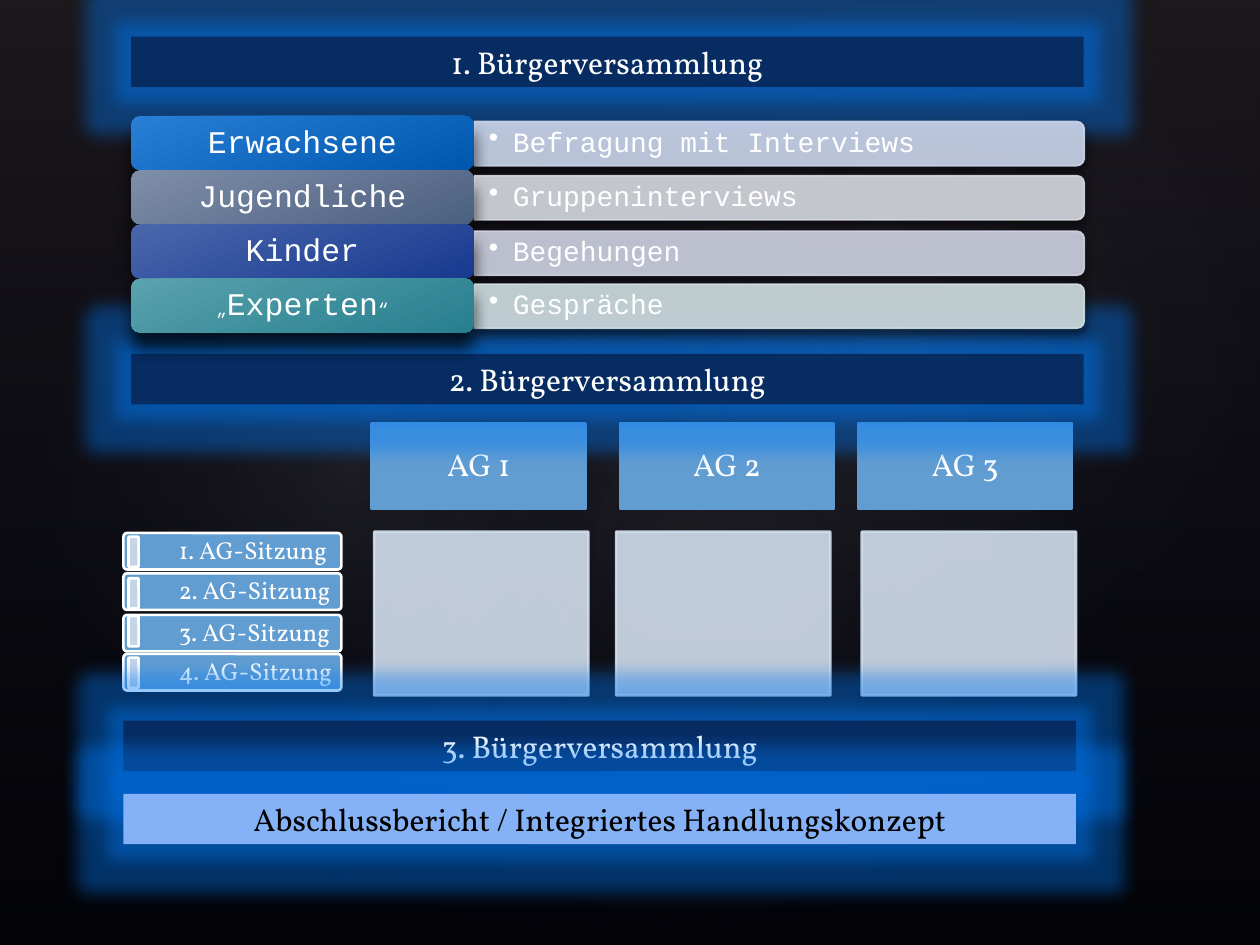
import pptx
import pptx.util
import pptx.dml.color
import pptx.enum.shapes
import pptx.enum.text
import pptx.oxml
import pptx.oxml.ns
from lxml import etree

Inches = pptx.util.Inches
Pt = pptx.util.Pt
qn = pptx.oxml.ns.qn
SHAPE = pptx.enum.shapes.MSO_SHAPE
ALIGN = pptx.enum.text.PP_ALIGN
NAMESPACE = pptx.oxml.ns.nsdecls("a")

COLORS = {
    "black": "000000", "white": "FFFFFF", "navy": "072C62", "sky": "629DD1",
    "pale": "C5D5E9", "panel": "D3DFEE", "report": "85B2F6", "glow": "0078F5",
    "haze": "504652", "night": "242852", "spot": "C4BCC6",
}
GROUPS = [
    ([("Erwachsene", 18)], "Befragung mit Interviews", "297FD5", "0057AE", "CDD8EF", 0.96, 0.14),
    ([("Jugendliche", 18)], "Gruppeninterviews", "7F8FA9", "4B5F7F", "D8DBE2", 1.39, 0.14),
    ([("Kinder", 18)], "Begehungen", "4A66AC", "183A90", "D0D3E3", 1.83, 0.14),
    ([("„", 10), ("Experten", 18), ("“", 10)], "Gespräche", "5AA2AE", "277F8E", "D2E0E3", 2.25, 0.08),
]


def color(value):
    return pptx.dml.color.RGBColor.from_string(value)


def add_block(page, kind, left, top, width, height, fill, line=None, weight=1.5,
              alpha=None, corner=None, rotation=0):
    shape = page.shapes.add_shape(kind, Inches(left), Inches(top), Inches(width), Inches(height))
    shape.shadow.inherit = False
    shape.rotation = rotation
    shape.fill.solid()
    shape.fill.fore_color.rgb = color(fill)
    if line:
        shape.line.color.rgb = color(line)
        shape.line.width = Pt(weight)
    else:
        shape.line.fill.background()
    if corner is not None:
        shape.adjustments[0] = corner
    if alpha:
        for tone in shape._element.spPr.iter(qn("a:srgbClr")):
            etree.SubElement(tone, qn("a:alpha"), val=str(alpha * 1000))
    return shape


def set_gradient(shape, stops, angle=None):
    marks = "".join(
        f'<a:gs pos="{position * 1000}"><a:srgbClr val="{tone}">'
        f'<a:alpha val="{alpha * 1000}"/></a:srgbClr></a:gs>'
        for position, tone, alpha in stops)
    if angle is None:
        course = '<a:path path="circle"><a:fillToRect l="50000" t="50000" r="50000" b="50000"/></a:path>'
    else:
        course = f'<a:lin ang="{angle * 60000}" scaled="0"/>'
    gradient = pptx.oxml.parse_xml(
        f'<a:gradFill {NAMESPACE} rotWithShape="1"><a:gsLst>{marks}</a:gsLst>{course}</a:gradFill>')
    properties = shape._element.spPr
    properties.replace(properties.find(qn("a:solidFill")), gradient)


def add_effect(shape, tag, tone, alpha, **attributes):
    effects = shape._element.spPr.find(qn("a:effectLst"))
    effect = etree.SubElement(effects, qn(tag), attributes)
    etree.SubElement(etree.SubElement(effect, qn("a:srgbClr"), val=tone),
                     qn("a:alpha"), val=str(alpha * 1000))


def add_shadow(shape, alpha, blur, distance):
    add_effect(shape, "a:outerShdw", COLORS["black"], alpha, blurRad=str(Pt(blur)),
               dist=str(Pt(distance)), dir="5400000", algn="ctr", rotWithShape="0")


def write_text(box, pieces, font="Vollkorn", tone="white", align=ALIGN.CENTER,
               insets=(0.1, 0.05), spacing=None, bullet=False):
    frame = box.text_frame
    frame.word_wrap = True
    frame.vertical_anchor = pptx.enum.text.MSO_ANCHOR.MIDDLE
    frame.margin_left = frame.margin_right = Inches(insets[0])
    frame.margin_top = frame.margin_bottom = Inches(insets[1])
    para = frame.paragraphs[0]
    para.alignment = align
    if spacing:
        para.line_spacing = spacing
    if bullet:
        para.level = 1
        properties = para._p.get_or_add_pPr()
        properties.set("marL", str(Inches(0.19)))
        properties.set("indent", str(-Inches(0.19)))
        etree.SubElement(properties, qn("a:buChar"), char="•")
    for text, size in pieces:
        span = para.add_run()
        span.text = text
        span.font.name = font
        span.font.size = Pt(size)
        span.font.color.rgb = color(COLORS[tone])


def add_label(page, left, top, width, height, pieces, **style):
    box = page.shapes.add_textbox(Inches(left), Inches(top), Inches(width), Inches(height))
    write_text(box, pieces, spacing=0.9, **style)


def add_backdrop(page):
    page.background.fill.solid()
    page.background.fill.fore_color.rgb = color(COLORS["black"])
    veil = add_block(page, SHAPE.RECTANGLE, 0, 0, 10, 7.5, COLORS["night"])
    set_gradient(veil, [(0, COLORS["haze"], 36), (100, COLORS["night"], 10)], 90)
    for left, top, width, height, rotation, alpha in [
            (1.5, 1.14, 7.92, 6.24, 328.7, 7),
            (-0.3, 1.28, 6.06, 4.9, 294.3, 8),
            (3.58, 0.13, 7.09, 5.2, 328.7, 8)]:
        spot = add_block(page, SHAPE.OVAL, left, top, width, height, COLORS["spot"], rotation=rotation)
        set_gradient(spot, [(0, COLORS["spot"], alpha), (58, COLORS["night"], 0)])


def add_session(page, number, top, tab_top):
    frame = dict(line=COLORS["white"], corner=0.1)
    add_block(page, SHAPE.ROUNDED_RECTANGLE, 0.98, top, 1.73, 0.29, COLORS["sky"], **frame)
    add_label(page, 1.36, top, 1.36, 0.29, [(f"{number}. AG-Sitzung", 14)],
              align=ALIGN.LEFT, insets=(0.06, 0.06))
    add_block(page, SHAPE.ROUNDED_RECTANGLE, 1.02, tab_top, 0.08, 0.24, COLORS["pale"], **frame)


def add_team(page, number, left, panel_left):
    tile = add_block(page, SHAPE.RECTANGLE, left, 3.36, 1.7, 0.68, COLORS["sky"], COLORS["sky"])
    write_text(tile, [(f"AG {number}", 18)], insets=(0.14, 0.08), spacing=0.9)
    add_block(page, SHAPE.RECTANGLE, panel_left, 4.22, 1.7, 1.3,
              COLORS["panel"], COLORS["panel"], alpha=90)


def add_bar(page, left, top, text, fill="navy", tone="white"):
    bar = add_block(page, SHAPE.RECTANGLE, left, top, 7.56, 0.4, COLORS[fill])
    add_effect(bar, "a:glow", COLORS["glow"], 40, rad=str(Inches(0.25)))
    write_text(bar, [(text, 18)], tone=tone)


def add_group(page, top, pieces, method, start, end, pale, strip_top, inset):
    strip = add_block(page, SHAPE.ROUND_2_SAME_RECTANGLE, 6.01, strip_top - 2.24, 0.35, 4.84,
                      pale, pale, 1, alpha=90, rotation=90)
    add_shadow(strip, 60, 6, 3)
    add_label(page, 3.76, strip_top + 0.02, 4.82, 0.31, [(method, 16)], font="Courier New",
              align=ALIGN.LEFT, insets=(0.12, 0.12), bullet=True)
    plate = add_block(page, SHAPE.ROUNDED_RECTANGLE, 1.04, top, 2.72, 0.43, start)
    set_gradient(plate, [(0, start, 100), (100, end, 100)], 69)
    add_shadow(plate, 70, 9, 9)
    add_label(page, 1.06, top + 0.02, 2.68, 0.39, pieces, font="Courier New", insets=(inset, inset))


def main():
    deck = pptx.Presentation()
    deck.slide_width, deck.slide_height = Inches(10), Inches(7.5)
    page = deck.slides.add_slide(deck.slide_layouts[6])
    add_backdrop(page)
    for number, tops in enumerate([(4.23, 4.26), (4.55, 4.59), (4.88, 4.89), (5.19, 5.22)], 1):
        add_session(page, number, *tops)
    for number, lefts in enumerate([(2.95, 2.97), (4.92, 4.89), (6.81, 6.84)], 1):
        add_team(page, number, *lefts)
    for number, left, top in [(2, 1.04, 2.81), (3, 0.98, 5.72), (1, 1.04, 0.29)]:
        add_bar(page, left, top, f"{number}. Bürgerversammlung")
    for row, group in enumerate(GROUPS):
        add_group(page, 0.92 + 0.43 * row, *group)
    add_bar(page, 0.98, 6.3, "Abschlussbericht / Integriertes Handlungskonzept", "report", "black")
    deck.save("out.pptx")


if __name__ == "__main__":
    main()
